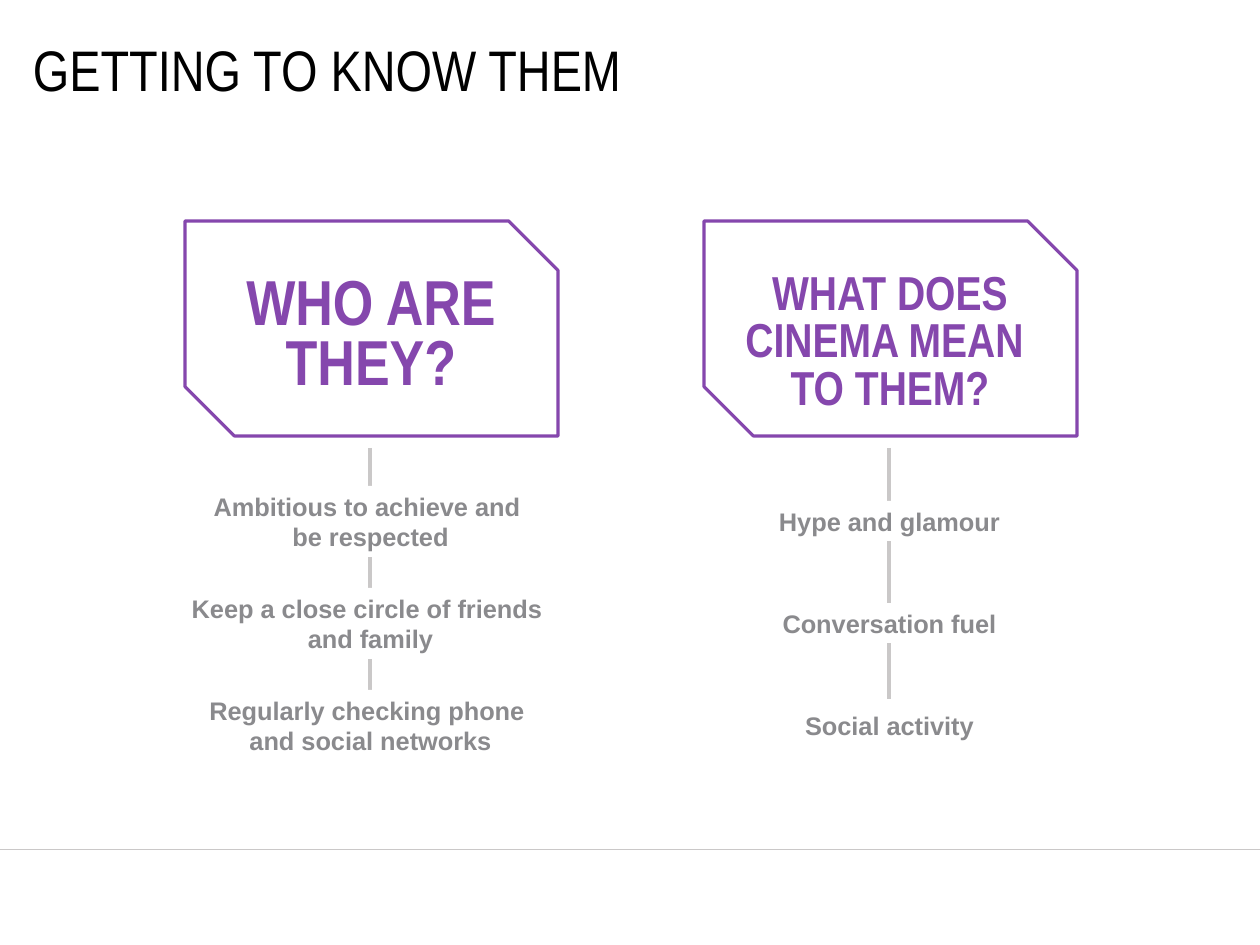
"""Build the "Getting to know them" slide: two headed columns of linked points."""
from lxml.etree import SubElement
from pptx import Presentation
from pptx.dml.color import RGBColor
from pptx.enum.shapes import MSO_CONNECTOR as LINE, MSO_SHAPE as SHAPE
from pptx.enum.text import MSO_ANCHOR as ANCHOR, PP_ALIGN as ALIGN
from pptx.oxml.ns import qn
from pptx.util import Emu, Pt

PX = 8000
WIDTH, HEIGHT = 1260, 945
PURPLE, RULE_GREY, TEXT_GREY = "8547AD", "CAC8C8", "8A8A8D"
COLUMN_STEP, POINT_STEP = 519, 102
FIRST_POINT_MIDDLE = 521

columns = [
    (["WHO ARE THEY?"], 40, 38, 271, 134, 71, [
        ["Ambitious to achieve and ", "be respected"],
        ["Keep a close circle of friends ", "and family"],
        ["Regularly checking phone ", "and social networks"],
    ]),
    (["WHAT DOES", "CINEMA MEAN ", "TO THEM?"], 30, 30, 266, 155, 40, [
        ["Hype and glamour"],
        ["Conversation fuel"],
        ["Social activity"],
    ]),
]

deck = Presentation()
deck.slide_width, deck.slide_height = Emu(WIDTH * PX), Emu(HEIGHT * PX)
slide = deck.slides.add_slide(deck.slide_layouts[6])
shapes = slide.shapes


def add_rule(x1, y1, x2, y2, weight):
    rule = shapes.add_connector(LINE.STRAIGHT, *(Emu(n * PX) for n in (x1, y1, x2, y2)))
    rule.line.color.rgb = RGBColor.from_string(RULE_GREY)
    rule.line.width = Pt(weight)
    SubElement(rule._element.spPr, qn("a:effectLst"))


def write(box, paragraphs, font, size, color, bold, align, inset_x, inset_y, spacing=None):
    frame = box.text_frame
    frame.word_wrap = True
    frame.vertical_anchor = ANCHOR.MIDDLE
    frame.margin_left = frame.margin_right = Emu(inset_x * PX)
    frame.margin_top = frame.margin_bottom = Emu(inset_y * PX)
    for index, lines in enumerate(paragraphs):
        paragraph = frame.add_paragraph() if index else frame.paragraphs[0]
        paragraph.alignment = align
        paragraph.line_spacing = spacing
        for row, line in enumerate(lines):
            if row:
                paragraph.add_line_break()
            run = paragraph.add_run()
            run.text = line
            run.font.name, run.font.size, run.font.bold = font, Pt(size), bold
            run.font.color.rgb = RGBColor.from_string(color)


add_rule(0, 849, WIDTH, 849, 0.5)

title = shapes.add_textbox(*(Emu(n * PX) for n in (33, 43, 1164, 51)))
write(title, [["GETTING TO KNOW THEM"]], "Arial Narrow", 36, "000000", False, ALIGN.LEFT, 0, 0)

for column, (heading, size, spacing, top, height, point_height, points) in enumerate(columns):
    shift = column * COLUMN_STEP

    frame_place = (185 + shift, 221, 373, 215)
    heading_frame = shapes.add_shape(SHAPE.SNIP_2_DIAG_RECTANGLE, *(Emu(n * PX) for n in frame_place))
    heading_frame.adjustments[0], heading_frame.adjustments[1] = 0, 0.23
    heading_frame.shadow.inherit = False
    heading_frame.fill.background()
    heading_frame.line.color.rgb = RGBColor.from_string(PURPLE)
    heading_frame.line.width = Pt(2)

    heading_box = shapes.add_textbox(*(Emu(n * PX) for n in (197 + shift, top, 348, height)))
    write(heading_box, [heading], "Arial Narrow", size, PURPLE, True, ALIGN.CENTER, 11, 6, Pt(spacing))

    add_rule(370 + shift, 448, 370 + shift, 699, 2)

    for row, lines in enumerate(points):
        point_top = FIRST_POINT_MIDDLE + row * POINT_STEP - point_height // 2
        point_place = (147 + shift, point_top, 447, point_height)
        point = shapes.add_shape(SHAPE.RECTANGLE, *(Emu(n * PX) for n in point_place))
        point.shadow.inherit = False
        point.fill.solid()
        point.fill.fore_color.rgb = RGBColor.from_string("FFFFFF")
        point.line.fill.background()
        write(point, [[line] for line in lines], "Arial", 16, TEXT_GREY, True, ALIGN.CENTER, 11, 5)

deck.save("out.pptx")
